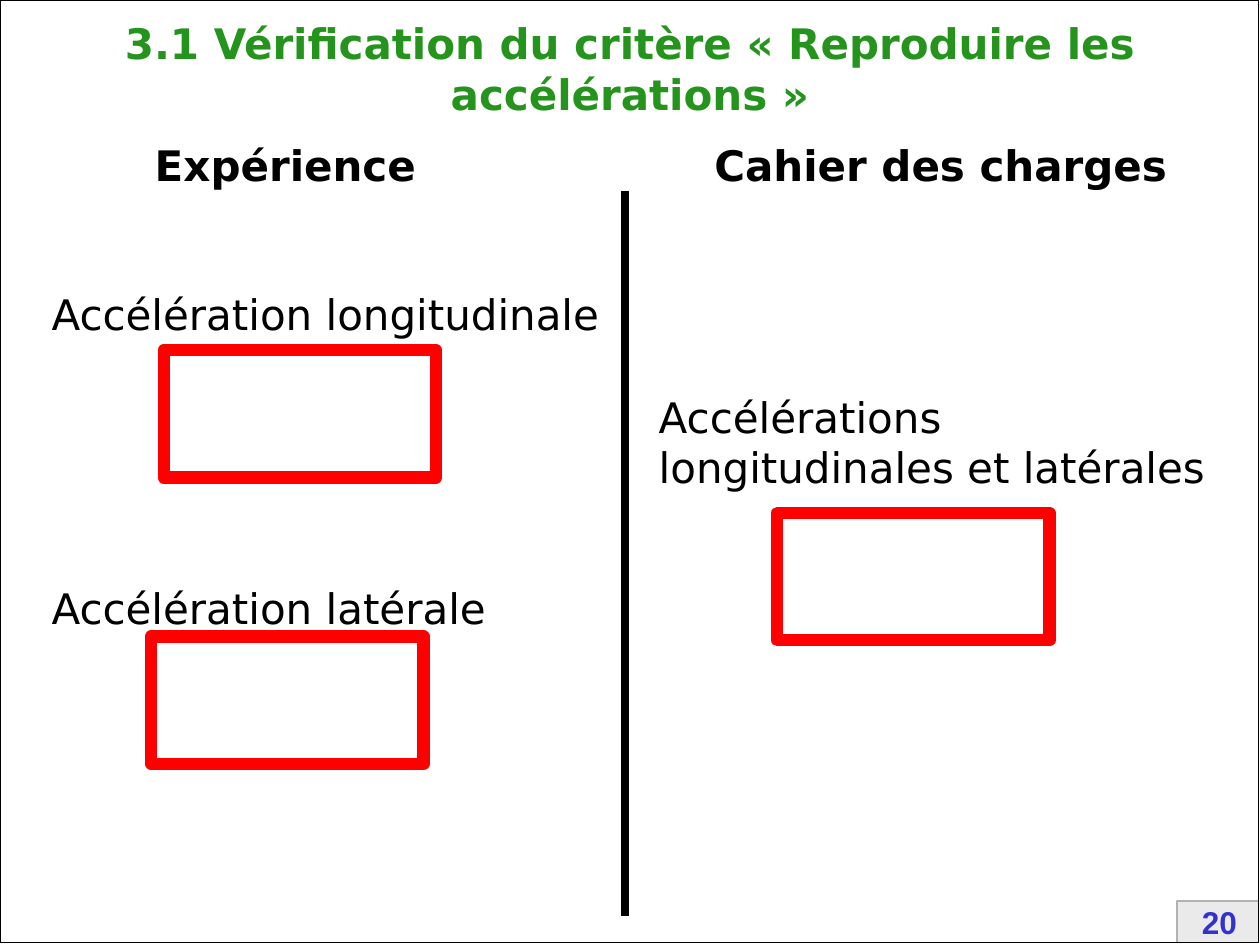
"""Build the slide that checks the acceleration criterion."""
import dataclasses

import lxml.etree
import pptx
import pptx.dml.color
import pptx.enum.shapes
import pptx.enum.text
import pptx.oxml.ns
import pptx.util

Cm = pptx.util.Cm
Align = pptx.enum.text.PP_ALIGN
Anchor = pptx.enum.text.MSO_ANCHOR


@dataclasses.dataclass(frozen=True)
class Theme:
    """Colours, fonts and type sizes of the slide."""
    title: str = "25941C"
    ink: str = "000000"
    accent: str = "FF0000"
    number: str = "3333CC"
    panel: str = "EAEAEA"
    shade: str = "B2B2B2"
    light: str = "FFFFFF"
    text_font: str = "DejaVu Sans"
    number_font: str = "Arial"
    text_size: int = 24
    number_size: int = 18


THEME = Theme()


def colour(code):
    """Turn a hexadecimal code into a colour."""
    return pptx.dml.color.RGBColor.from_string(code)


def set_line(item, code, width):
    """Give a shape or connector a solid line."""
    item.line.color.rgb = colour(code)
    item.line.width = pptx.util.Pt(width)


def write(box, text, code=THEME.ink, bold=False, align=Align.LEFT,
          anchor=Anchor.MIDDLE, font=THEME.text_font, size=THEME.text_size):
    """Write one formatted paragraph into a box."""
    frame = box.text_frame
    frame.text = text
    frame.word_wrap = True
    frame.vertical_anchor = anchor
    para = frame.paragraphs[0]
    para.alignment = align
    for span in para.runs:
        span.font.name = font
        span.font.size = pptx.util.Pt(size)
        span.font.bold = bold
        span.font.color.rgb = colour(code)


def add_label(page, text, left, top, width, height=1.27, **style):
    """Add a text box."""
    box = page.shapes.add_textbox(Cm(left), Cm(top), Cm(width), Cm(height))
    write(box, text, **style)


def add_rectangle(page, left, top, width, height, fill=None, line=None, weight=1):
    """Add a rectangle with an optional fill and outline."""
    box = page.shapes.add_shape(pptx.enum.shapes.MSO_SHAPE.RECTANGLE,
                                Cm(left), Cm(top), Cm(width), Cm(height))
    box.shadow.inherit = False
    if fill:
        box.fill.solid()
        box.fill.fore_color.rgb = colour(fill)
    else:
        box.fill.background()
    if line:
        set_line(box, line, weight)
    else:
        box.line.fill.background()


def add_edge(page, points, code):
    """Add an open outline through the given points."""
    corners = [(Cm(x), Cm(y)) for x, y in points]
    builder = page.shapes.build_freeform(*corners[0])
    builder.add_line_segments(corners[1:], close=False)
    edge = builder.convert_to_shape()
    edge.shadow.inherit = False
    edge.fill.background()
    set_line(edge, code, 1)


def add_divider(page, x, top, bottom):
    """Add the thick vertical line between the two columns."""
    divider = page.shapes.add_connector(pptx.enum.shapes.MSO_CONNECTOR.STRAIGHT,
                                        Cm(x), Cm(top), Cm(x), Cm(bottom))
    set_line(divider, THEME.ink, 5)
    lxml.etree.SubElement(divider.element.spPr, pptx.oxml.ns.qn("a:effectLst"))


def add_page_number(page, text):
    """Add the bevelled page number in the lower right corner."""
    left, top, right, bottom = 23.73, 18.16, 25.38, 19.02
    add_rectangle(page, left, top, right - left, bottom - top, fill=THEME.panel)
    add_edge(page, [(right, top), (left, top), (left, bottom)], THEME.shade)
    add_edge(page, [(right, top), (right, bottom), (left, bottom)], THEME.light)
    add_label(page, text, 23.83, 18.08, 1.5, 1.02, code=THEME.number, bold=True,
              align=Align.CENTER, font=THEME.number_font, size=THEME.number_size)


def add_title(page, text):
    """Place and fill the title placeholder."""
    title = page.shapes.title
    title.left, title.top, title.width, title.height = Cm(0), Cm(0.23), Cm(25.4), Cm(2.31)
    write(title, text, code=THEME.title, bold=True, align=Align.CENTER, anchor=Anchor.TOP)


def main():
    """Build and save the deck."""
    deck = pptx.Presentation()
    deck.slide_width, deck.slide_height = Cm(25.4), Cm(19.05)
    page = deck.slides.add_slide(deck.slide_layouts.get_by_name("Title Only"))

    add_page_number(page, "20")
    add_rectangle(page, 0, 0, 25.37, 19, line=THEME.ink)
    add_title(page, "3.1 Vérification du critère « Reproduire les accélérations »")
    add_divider(page, 12.6, 3.86, 18.47)

    for text, left, width in (("Expérience", 2.87, 7.49),
                              ("Cahier des charges", 14.15, 10.34)):
        add_label(page, text, left, 2.69, width, bold=True)
    for text, left, top, width, height in (
            ("Accélération longitudinale", 0.79, 5.69, 12.09, 1.27),
            ("Accélération latérale", 0.79, 11.61, 11.38, 1.27),
            ("Accélérations longitudinales et latérales", 13.03, 7.75, 12.09, 2.31)):
        add_label(page, text, left, top, width, height)
    for left, top in ((3.3, 7.06), (3.05, 12.83), (15.67, 10.34)):
        add_rectangle(page, left, top, 5.49, 2.57, line=THEME.accent, weight=7)

    deck.save("out.pptx")


if __name__ == "__main__":
    main()
